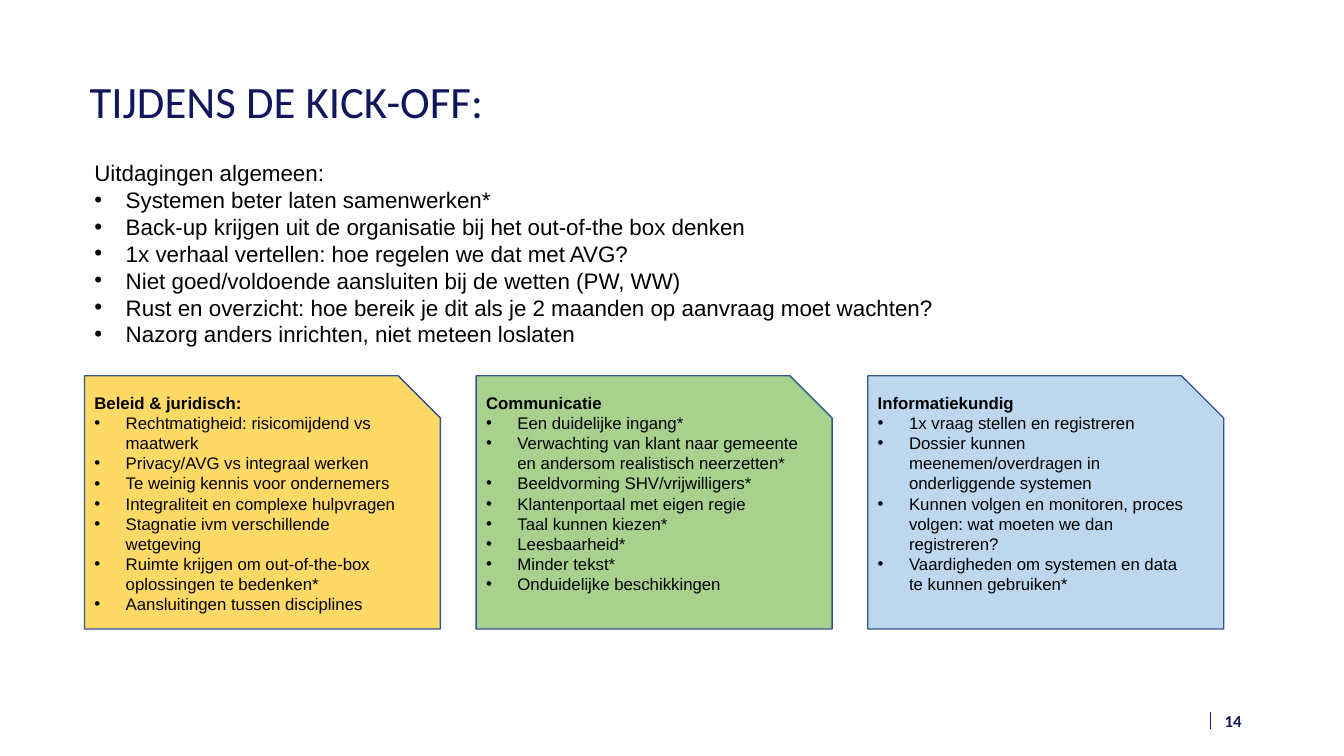
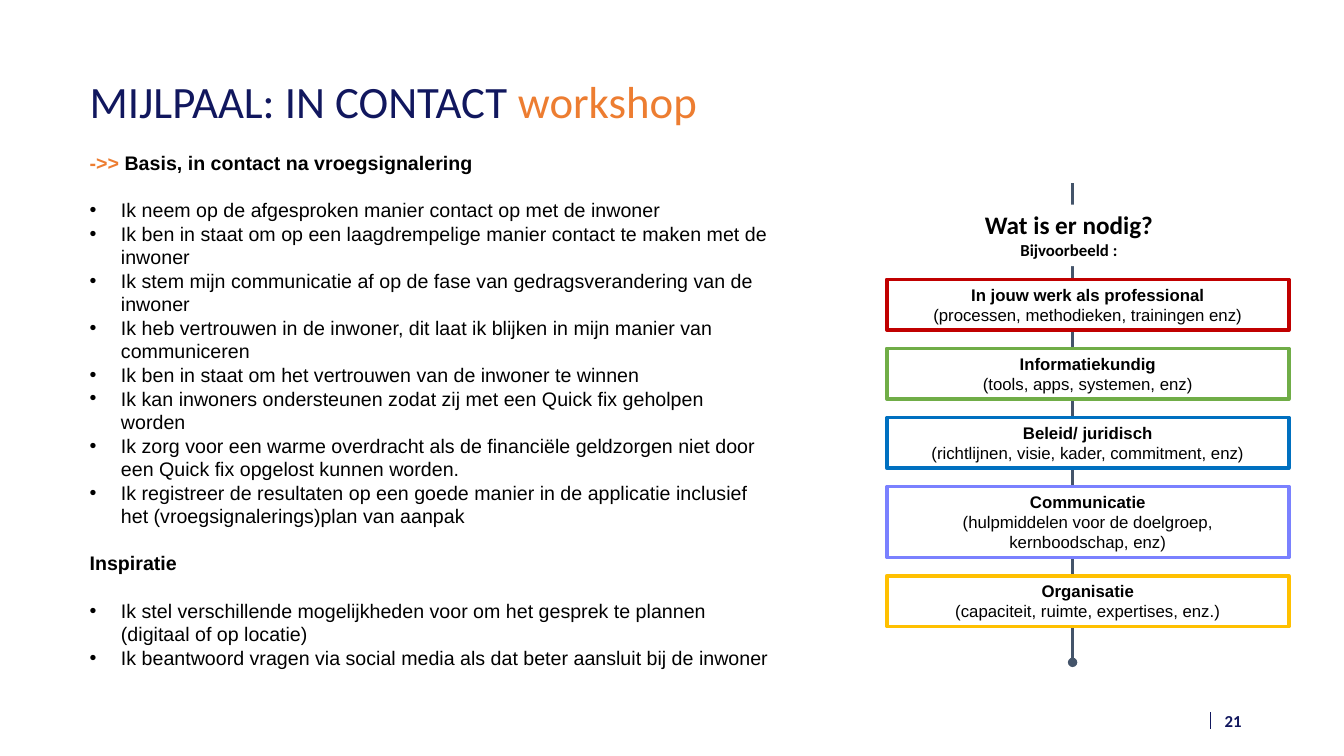
from dataclasses import dataclass

from lxml.etree import SubElement
from pptx import Presentation
from pptx.dml.color import RGBColor
from pptx.enum.shapes import MSO_CONNECTOR as Connector, MSO_SHAPE as Preset
from pptx.enum.text import MSO_ANCHOR as Anchor, PP_ALIGN as Align
from pptx.oxml.ns import qn
from pptx.util import Cm, Pt

COLORS = {
    "navy": "11175E", "orange": "ED7D31", "black": "000000", "white": "FFFFFF",
    "edge": "325491", "yellow": "FFD966", "green": "A9D18E", "blue": "BDD7EE",
    "slate": "44546A", "red": "C00000", "leaf": "70AD47", "sea": "0070C0",
    "violet": "7A81FF", "gold": "FFC000",
}
BODY_FONT, TITLE_FONT = "Arial", "Calibri"
INDENT = Cm(0.79)
BLANK_LINE = Pt(16.9)


@dataclass
class Line:
    text: str
    bold: bool = False
    bullet: bool = False
    color: str = "black"
    before: int = 0
    size: float = 0
    tail: str = ""
    tail_color: str = "black"


def rgb(name):
    return RGBColor.from_string(COLORS[name])


def bullets(texts, before=0):
    return [Line(text, bullet=True, before=0 if index else before)
            for index, text in enumerate(texts)]


def add_bullet(para):
    props = para._p.get_or_add_pPr()
    props.set("marL", str(INDENT))
    props.set("indent", str(-INDENT))
    SubElement(props, qn("a:buFont")).set("typeface", BODY_FONT)
    SubElement(props, qn("a:buChar")).set("char", "•")


def write(frame, lines, size, font=BODY_FONT, align=Align.LEFT):
    frame.word_wrap = True
    for index, line in enumerate(lines):
        para = frame.add_paragraph() if index else frame.paragraphs[0]
        para.text = line.text
        if line.bullet:
            add_bullet(para)
        para.alignment = align
        if line.before:
            para.space_before = line.before
        if line.tail:
            para.add_run().text = line.tail
        for span, color in zip(para.runs, (line.color, line.tail_color)):
            span.font.name = font
            span.font.size = Pt(line.size or size)
            span.font.bold = line.bold
            span.font.color.rgb = rgb(color)


def add_text(page, box, lines, size, **style):
    frame = page.shapes.add_textbox(*map(Cm, box)).text_frame
    write(frame, lines, size, **style)
    return frame


def add_panel(page, preset, box, fill, edge=None, weight=1):
    panel = page.shapes.add_shape(preset, *map(Cm, box))
    panel.shadow.inherit = False
    panel.fill.solid()
    panel.fill.fore_color.rgb = rgb(fill)
    if edge:
        panel.line.color.rgb = rgb(edge)
        panel.line.width = Pt(weight)
    else:
        panel.line.fill.background()
    panel.text_frame.vertical_anchor = Anchor.TOP
    return panel


def add_upright(page, x, top, bottom, color, weight, dot=False):
    rule = page.shapes.add_connector(
        Connector.STRAIGHT, Cm(x), Cm(top), Cm(x), Cm(bottom))
    rule.line.color.rgb = rgb(color)
    rule.line.width = Pt(weight)
    if dot:
        SubElement(rule.line._get_or_add_ln(), qn("a:tailEnd")).set("type", "oval")
    SubElement(rule._element.spPr, qn("a:effectLst"))


def add_page(deck, title, number, accent=""):
    page = deck.slides.add_slide(deck.slide_layouts[6])
    add_upright(page, 30.5, 17.95, 18.37, "navy", 0.75)
    footer = add_text(page, (30.07, 17.65, 1.47, 1.02),
                      [Line(number, bold=True, color="navy")], 12,
                      font=TITLE_FONT, align=Align.RIGHT)
    footer.vertical_anchor = Anchor.MIDDLE
    heading = Line(title, color="navy", tail=accent, tail_color="orange")
    add_text(page, (2.01, 1.73, 22.71, 1.63), [heading], 32, font=TITLE_FONT)
    return page


def add_cards(page, box, cards):
    left, top, width, height = box
    card_width = 8.97
    pitch = (width - card_width) / (len(cards) - 1)
    for index, (heading, fill, spare_lines, items) in enumerate(cards):
        card = add_panel(page, Preset.SNIP_1_RECTANGLE,
                         (left + index * pitch, top, card_width, height), fill, "edge")
        frame = card.text_frame
        frame.vertical_anchor = Anchor.MIDDLE
        frame.margin_top = 0
        frame.margin_bottom = Cm(0.48 + 0.51 * spare_lines)
        write(frame, [Line(heading, bold=True)] + bullets(items), 12)


def add_needs(page, box, needs):
    left, top, width, height = box
    gap, first_top, text_line = 0.46, 2.42, 0.51
    add_upright(page, left + 4.68, top, top + height, "slate", 2.25, dot=True)
    y = top + first_top
    for heading, edge, details in needs:
        need_height = 0.77 + text_line * len(details)
        need = add_panel(page, Preset.RECTANGLE, (left, y, width, need_height),
                         "white", edge, 2.5)
        write(need.text_frame, [Line(heading, bold=True)] + [Line(text) for text in details],
              12, align=Align.CENTER)
        y += need_height + gap
    label = add_panel(page, Preset.RECTANGLE, (left + 1.89, top + 0.54, 5.4, 1.55), "white")
    write(label.text_frame,
          [Line("Wat is er nodig?", bold=True), Line("Bijvoorbeeld :", bold=True, size=12)],
          18, font=TITLE_FONT, align=Align.CENTER)


def build_kickoff(deck):
    page = add_page(deck, "TIJDENS DE KICK-OFF:", "14")
    challenges = bullets([
        "Systemen beter laten samenwerken*",
        "Back-up krijgen uit de organisatie bij het out-of-the box denken",
        "1x verhaal vertellen: hoe regelen we dat met AVG?",
        "Niet goed/voldoende aansluiten bij de wetten (PW, WW)",
        "Rust en overzicht: hoe bereik je dit als je 2 maanden op aanvraag moet wachten?",
        "Nazorg anders inrichten, niet meteen loslaten",
    ])
    add_text(page, (2.13, 3.89, 23, 5.05),
             [Line("Uitdagingen algemeen:")] + challenges, 16)
    add_cards(page, (2.13, 9.47, 28.71, 6.38), [
        ("Beleid & juridisch:", "yellow", 0, [
            "Rechtmatigheid: risicomijdend vs maatwerk",
            "Privacy/AVG vs integraal werken",
            "Te weinig kennis voor ondernemers",
            "Integraliteit en complexe hulpvragen",
            "Stagnatie ivm verschillende wetgeving",
            "Ruimte krijgen om out-of-the-box oplossingen te bedenken*",
            "Aansluitingen tussen disciplines",
        ]),
        ("Communicatie", "green", 1, [
            "Een duidelijke ingang*",
            "Verwachting van klant naar gemeente en andersom realistisch neerzetten*",
            "Beeldvorming SHV/vrijwilligers*",
            "Klantenportaal met eigen regie",
            "Taal kunnen kiezen*",
            "Leesbaarheid*",
            "Minder tekst*",
            "Onduidelijke beschikkingen",
        ]),
        ("Informatiekundig", "blue", 1, [
            "1x vraag stellen en registreren",
            "Dossier kunnen meenemen/overdragen in onderliggende systemen",
            "Kunnen volgen en monitoren, proces volgen: wat moeten we dan registreren?",
            "Vaardigheden om systemen en data te kunnen gebruiken*",
        ]),
    ])


def build_milestone(deck):
    page = add_page(deck, "MIJLPAAL: IN CONTACT", "21", " workshop")
    basics = bullets([
        "Ik neem op de afgesproken manier contact op met de inwoner",
        "Ik ben in staat om op een laagdrempelige manier contact te maken met de inwoner",
        "Ik stem mijn communicatie af op de fase van gedragsverandering van de inwoner",
        "Ik heb vertrouwen in de inwoner, dit laat ik blijken in mijn manier van communiceren",
        "Ik ben in staat om het vertrouwen van de inwoner te winnen",
        "Ik kan inwoners ondersteunen zodat zij met een Quick fix geholpen worden",
        "Ik zorg voor een warme overdracht als de financiële geldzorgen niet door "
        "een Quick fix opgelost kunnen worden.",
        "Ik registreer de resultaten op een goede manier in de applicatie inclusief "
        "het (vroegsignalerings)plan van aanpak",
    ], BLANK_LINE)
    inspiration = bullets([
        "Ik stel verschillende mogelijkheden voor om het gesprek te plannen "
        "(digitaal of op locatie)",
        "Ik beantwoord vragen via social media als dat beter aansluit bij de inwoner",
    ], BLANK_LINE)
    intro = Line("->>", bold=True, color="orange",
                 tail=" Basis, in contact na vroegsignalering")
    add_text(page, (2.01, 3.68, 17.68, 13.41),
             [intro, *basics, Line("Inspiratie", bold=True, before=BLANK_LINE), *inspiration],
             14)
    add_needs(page, (22.35, 4.62, 10.13, 12.07), [
        ("In jouw werk als professional", "red",
         ["(processen, methodieken, trainingen enz)"]),
        ("Informatiekundig", "leaf", ["(tools, apps, systemen, enz)"]),
        ("Beleid/ juridisch", "sea", ["(richtlijnen, visie, kader, commitment, enz)"]),
        ("Communicatie", "violet",
         ["(hulpmiddelen voor de doelgroep,", "kernboodschap, enz)"]),
        ("Organisatie", "gold", ["(capaciteit, ruimte, expertises, enz.)"]),
    ])


def main():
    deck = Presentation()
    deck.slide_width, deck.slide_height = Cm(33.87), Cm(19.05)
    build_kickoff(deck)
    build_milestone(deck)
    deck.save("out.pptx")


if __name__ == "__main__":
    main()
